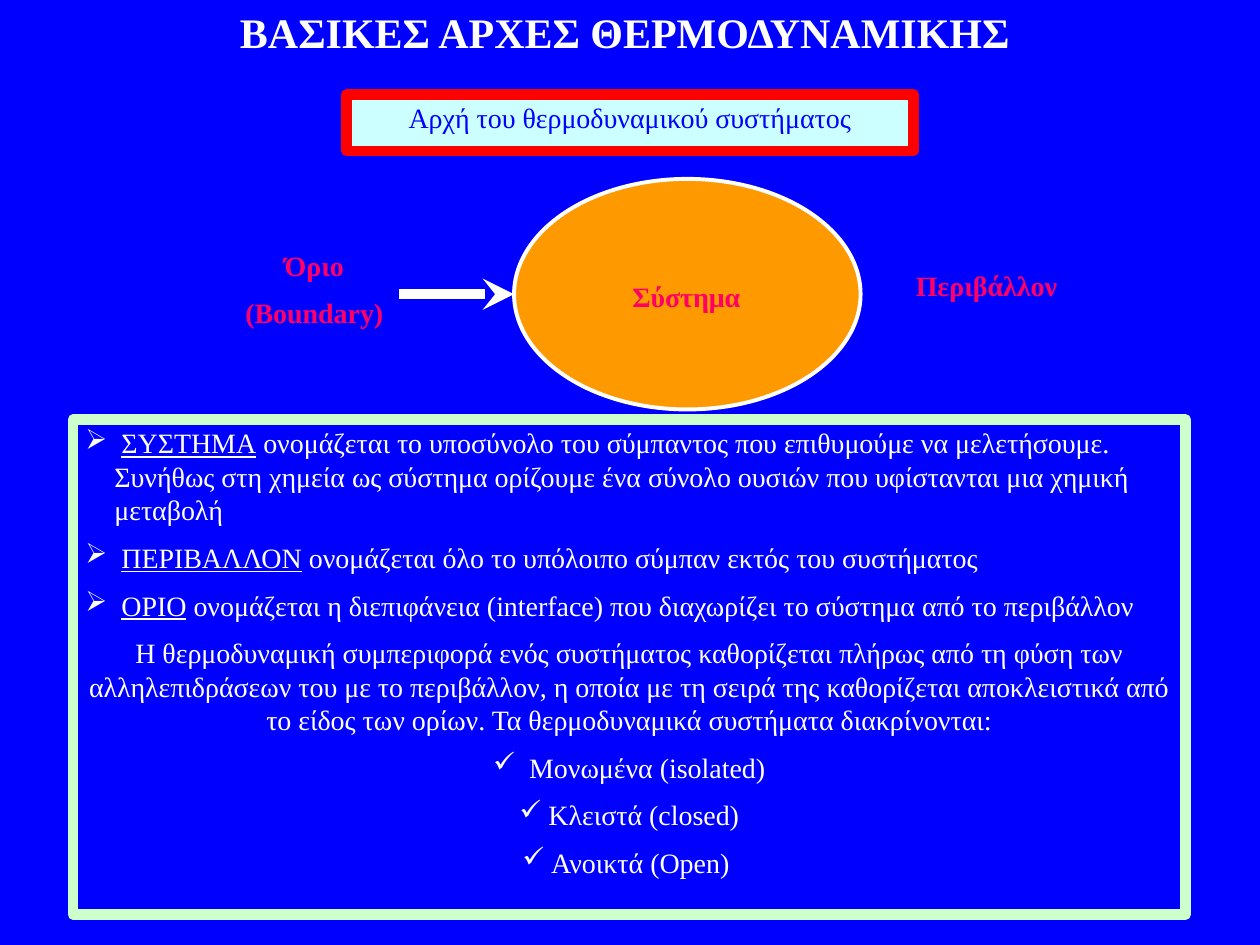
from pptx import Presentation
from pptx.dml.color import RGBColor
from pptx.enum.shapes import MSO_CONNECTOR as Connector, MSO_SHAPE as Shape
from pptx.enum.text import MSO_ANCHOR as Anchor, MSO_AUTO_SIZE as AutoSize, PP_ALIGN as Align
from pptx.oxml.ns import qn
from pptx.util import Inches, Pt
from lxml import etree

BLUE = RGBColor(0x00, 0x00, 0xFF)
WHITE = RGBColor(0xFF, 0xFF, 0xFF)
RED = RGBColor(0xFF, 0x00, 0x00)
PINK = RGBColor(0xFF, 0x00, 0x66)
ORANGE = RGBColor(0xFF, 0x99, 0x00)
PALE_CYAN = RGBColor(0xCC, 0xFF, 0xFF)
PALE_GREEN = RGBColor(0xCC, 0xFF, 0xCC)

TITLE = {"size": Pt(24), "color": WHITE, "bold": True}
HEADING = {"size": Pt(16), "color": BLUE}
LABEL = {"size": Pt(16), "color": PINK, "bold": True}
BODY = {"size": Pt(16), "color": WHITE}

DEFINITIONS = [
    ("ΣΥΣΤΗΜΑ", " ονομάζεται το υποσύνολο του σύμπαντος που επιθυμούμε να μελετήσουμε. "
     "Συνήθως στη χημεία ως σύστημα ορίζουμε ένα σύνολο ουσιών που υφίστανται μια χημική μεταβολή"),
    ("ΠΕΡΙΒΑΛΛΟΝ", " ονομάζεται όλο το υπόλοιπο σύμπαν εκτός του συστήματος"),
    ("ΟΡΙΟ", " ονομάζεται η διεπιφάνεια (interface) που διαχωρίζει το σύστημα από το περιβάλλον"),
]
SUMMARY = (
    "Η θερμοδυναμική συμπεριφορά ενός συστήματος καθορίζεται πλήρως από τη φύση των "
    "αλληλεπιδράσεων του με το περιβάλλον, η οποία με τη σειρά της καθορίζεται αποκλειστικά "
    "από το είδος των ορίων. Τα θερμοδυναμικά συστήματα διακρίνονται:"
)
SYSTEM_KINDS = [" Μονωμένα (isolated)", "Κλειστά (closed)", "Ανοικτά (Open) "]


def add_span(para, text, style, **extra):
    """Add a run of text with the given font values."""
    span = para.add_run()
    span.text = text
    for name, value in {"name": "Times New Roman", **style, **extra}.items():
        if name == "color":
            span.font.color.rgb = value
        else:
            setattr(span.font, name, value)


def set_bullet(para, mark):
    """Give a paragraph a hanging bullet."""
    props = para._p.get_or_add_pPr()
    props.set("marL", str(Inches(0.23)))
    props.set("indent", str(-Inches(0.23)))
    etree.SubElement(props, qn("a:buChar")).set("char", mark)


def write(shape, paragraphs, style):
    """Fill a shape with (alignment, bullet, spans) paragraphs."""
    frame = shape.text_frame
    frame.word_wrap = True
    frame.auto_size = AutoSize.SHAPE_TO_FIT_TEXT
    frame.vertical_anchor = Anchor.TOP
    for index, (align, mark, spans) in enumerate(paragraphs):
        para = frame.add_paragraph() if index else frame.paragraphs[0]
        para.alignment = align
        para.space_before = style["size"] // 2
        if mark:
            set_bullet(para, mark)
        for text, extra in spans:
            add_span(para, text, style, **extra)


def add_text(page, box, lines, style, align=Align.CENTER):
    """Place a text box with one paragraph per line."""
    shape = page.shapes.add_textbox(*map(Inches, box))
    write(shape, [(align, None, [(line, {})]) for line in lines], style)


def add_outlined(page, kind, box, line, width, fill=None):
    """Place an outlined preset shape."""
    shape = page.shapes.add_shape(kind, *map(Inches, box))
    shape.shadow.inherit = False
    if fill is None:
        shape.fill.background()
    else:
        shape.fill.solid()
        shape.fill.fore_color.rgb = fill
    shape.line.color.rgb = line
    shape.line.width = Pt(width)
    return shape


def add_heading(page, box):
    """Place the framed subject heading."""
    shape = add_outlined(page, Shape.RECTANGLE, box, RED, 6, PALE_CYAN)
    write(shape, [(Align.CENTER, None, [("Αρχή του θερμοδυναμικού συστήματος", {})])], HEADING)


def add_arrow(page, start, end):
    """Draw the arrow pointing at the boundary."""
    arrow = page.shapes.add_connector(Connector.STRAIGHT, *map(Inches, (*start, *end)))
    arrow.line.color.rgb = WHITE
    arrow.line.width = Pt(6)
    etree.SubElement(arrow.line._get_or_add_ln(), qn("a:tailEnd")).set("type", "stealth")
    etree.SubElement(arrow._element.spPr, qn("a:effectLst"))


def add_diagram(page, box):
    """Draw the system, its boundary and its surroundings."""
    left, top, width, height = box
    system = (left + 2.25, top, 2.75, height)
    add_outlined(page, Shape.OVAL, system, WHITE, 2.25, ORANGE)
    add_text(page, (left + width - 1.33, top + 0.66, 1.33, 0.37), ["Περιβάλλον"], LABEL, Align.LEFT)
    middle = top + height / 2
    add_arrow(page, (left + 1.34, middle), (system[0], middle))
    add_text(page, (left, top + 0.5, 1.33, 0.77), ["Όριο", "(Boundary)"], LABEL)
    add_text(page, (left + 3.09, top + 0.75, 1.08, 0.37), ["Σύστημα"], LABEL, Align.LEFT)


def add_definitions(page, box):
    """Place the framed definitions and kinds of system."""
    shape = add_outlined(page, Shape.RECTANGLE, box, PALE_GREEN, 6)
    paragraphs = [
        (Align.LEFT, "➢", [(" ", {}), (term, {"underline": True}), (meaning, {})])
        for term, meaning in DEFINITIONS
    ]
    paragraphs.append((Align.CENTER, None, [(SUMMARY, {})]))
    paragraphs += [(Align.CENTER, "✓", [(kind, {})]) for kind in SYSTEM_KINDS]
    write(shape, paragraphs, BODY)


def main():
    """Build and save the deck."""
    deck = Presentation()
    deck.slide_width, deck.slide_height = Inches(10), Inches(7.5)
    page = deck.slides.add_slide(deck.slide_layouts[6])
    page.background.fill.solid()
    page.background.fill.fore_color.rgb = BLUE
    add_text(page, (1, 0, 7.92, 0.5), ["ΒΑΣΙΚΕΣ ΑΡΧΕΣ ΘΕΡΜΟΔΥΝΑΜΙΚΗΣ"], TITLE)
    add_heading(page, (2.75, 0.75, 4.5, 0.45))
    add_diagram(page, (1.83, 1.42, 6.67, 1.83))
    add_definitions(page, (0.58, 3.33, 8.83, 3.93))
    deck.save("out.pptx")


if __name__ == "__main__":
    main()
